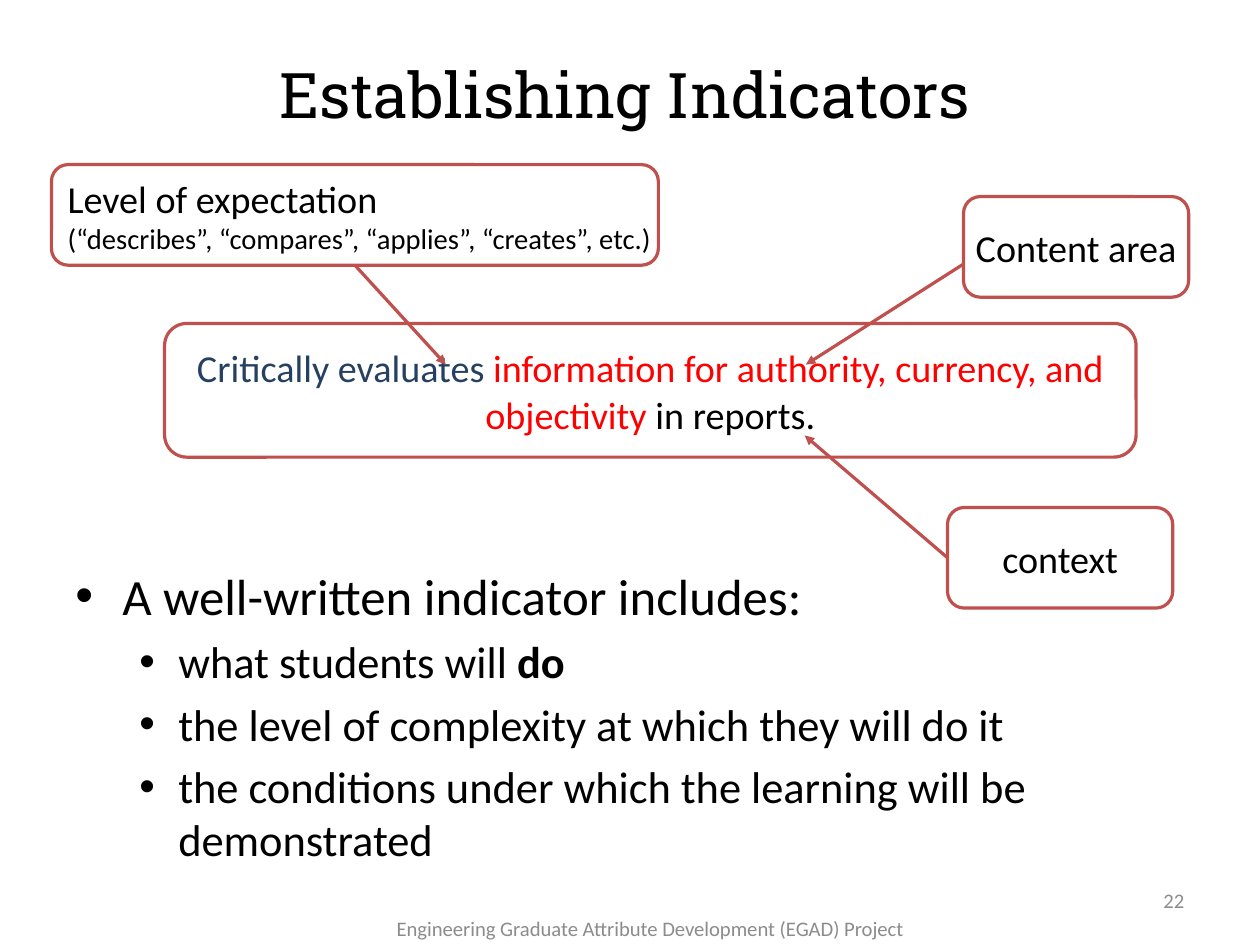
from lxml.etree import SubElement
from pptx import Presentation
from pptx.dml.color import RGBColor
from pptx.enum.shapes import MSO_CONNECTOR, MSO_SHAPE
from pptx.enum.text import MSO_ANCHOR, PP_ALIGN
from pptx.oxml.ns import qn
from pptx.util import Inches, Pt

BLACK, WHITE, GREY = "000000", "FFFFFF", "8C8C8C"
NAVY, RED, BRICK = "254061", "FF0000", "C0504D"
LEFT, MID, RIGHT = PP_ALIGN.LEFT, PP_ALIGN.CENTER, PP_ALIGN.RIGHT

# The page is 28 by 21 centimetres
WIDTH, HEIGHT = 28 / 2.54, 21 / 2.54

# A line of text is a list of runs: (words, size, colour)
# Labels: place, alignment, line, font
LABELS = [
    ((0.51, 0.51, 9.92, 0.61), MID,
     [("Establishing Indicators", 39.6, BLACK)], "Roboto Slab"),
    ((3.07, 7.97, 5.23, 0.3), MID,
     [("Engineering Graduate Attribute Development (EGAD) Project", 13, GREY)],
     "Calibri"),
    ((7.9, 7.66, 2.57, 0.44), RIGHT, [("22", 13, GREY)], "Calibri"),
]

# Boxes: place, alignment, lines
BOXES = {
    "example": ((1.44, 2.83, 8.5, 1.17), MID, [
        [("Critically evaluates ", 24, NAVY),
         ("information for authority, currency, and", 24, RED)],
        [("objectivity ", 24, RED), ("in reports.", 24, BLACK)]]),
    "content": ((8.43, 1.72, 1.97, 0.88), MID,
                [[("Content area", 24, BLACK)]]),
    "level": ((0.45, 1.44, 5.31, 0.88), LEFT, [
        [("Level of expectation", 24, BLACK)],
        [("(“describes”, “compares”, “applies”, “creates”, etc.)", 18, BLACK)]]),
    "context": ((8.29, 4.44, 1.97, 0.88), MID, [[("context", 24, BLACK)]]),
}

# Arrows: start, end, box and side joined at the start
ARROWS = [
    ((3.11, 2.32), (3.9, 3.19), ("level", 2)),
    ((8.43, 2.31), (7.05, 3.19), None),
    ((8.29, 4.88), (7.04, 3.81), ("context", 1)),
]

# Bullets: level, runs of (words, bold)
LIST_AT = (0.55, 4.88, 9.92, 3.16)
BULLETS = [
    (0, [("A well-written indicator includes:", False)]),
    (1, [("what students will ", False), ("do", True)]),
    (1, [("the level of complexity at which they will do it", False)]),
    (1, [("the conditions under which the learning will be demonstrated", False)]),
]
STYLES = [(32, 0.41, -0.41), (28, 0.9, -0.34)]  # size, margin, indent


def rgb(code):
    return RGBColor.from_string(code)


def inches(nums):
    return [Inches(n) for n in nums]


def set_frame(frame, pads, anchor, wrap):
    frame.margin_left = frame.margin_right = Inches(pads[0])
    frame.margin_top = frame.margin_bottom = Inches(pads[1])
    frame.vertical_anchor = anchor
    frame.word_wrap = wrap


def add_run(para, words, size, color, font="Calibri", bold=False):
    run = para.add_run()
    run.text = words
    run.font.size = Pt(size)
    run.font.name = font
    run.font.bold = bold
    run.font.color.rgb = rgb(color)


def next_para(frame, i):
    return frame.add_paragraph() if i else frame.paragraphs[0]


def add_text(place, anchor):
    frame = slide.shapes.add_textbox(*inches(place)).text_frame
    set_frame(frame, (0.11, 0.06), anchor, True)
    return frame


def add_label(place, align, line, font):
    para = add_text(place, MSO_ANCHOR.MIDDLE).paragraphs[0]
    para.alignment = align
    for run in line:
        add_run(para, *run, font)


def add_list():
    frame = add_text(LIST_AT, MSO_ANCHOR.TOP)
    for i, (level, runs) in enumerate(BULLETS):
        size, margin, indent = STYLES[level]
        para = next_para(frame, i)
        para.level = level
        if i:
            para.space_before = Pt(size * 0.2)
        props = para._p.get_or_add_pPr()
        props.set("marL", str(Inches(margin)))
        props.set("indent", str(Inches(indent)))
        SubElement(props, qn("a:buFont")).set("typeface", "Arial")
        SubElement(props, qn("a:buChar")).set("char", "•")
        for words, bold in runs:
            add_run(para, words, size, BLACK, bold=bold)


def add_box(place, align, lines):
    box = slide.shapes.add_shape(MSO_SHAPE.ROUNDED_RECTANGLE, *inches(place))
    box.shadow.inherit = False
    box.fill.solid()
    box.fill.fore_color.rgb = rgb(WHITE)
    box.line.color.rgb = rgb(BRICK)
    box.line.width = Pt(2)
    set_frame(box.text_frame, (0.1, 0.05), MSO_ANCHOR.MIDDLE, False)
    for i, line in enumerate(lines):
        para = next_para(box.text_frame, i)
        para.alignment = align
        para.line_spacing = 1.02
        for run in line:
            add_run(para, *run)
    return box


def add_arrow(start, end, joint):
    arrow = slide.shapes.add_connector(
        MSO_CONNECTOR.STRAIGHT, *inches(start + end))
    if joint:
        name, side = joint
        arrow.begin_connect(boxes[name], side)
    arrow.line.color.rgb = rgb(BRICK)
    arrow.line.width = Pt(2)
    SubElement(arrow.line._get_or_add_ln(), qn("a:tailEnd")).set(
        "type", "triangle")
    SubElement(arrow._element.spPr, qn("a:effectLst"))


deck = Presentation()
deck.slide_width = Inches(WIDTH)
deck.slide_height = Inches(HEIGHT)
slide = deck.slides.add_slide(deck.slide_layouts[6])
for label in LABELS:
    add_label(*label)
add_list()
boxes = {name: add_box(*box) for name, box in BOXES.items()}
for arrow in ARROWS:
    add_arrow(*arrow)
deck.save("out.pptx")
